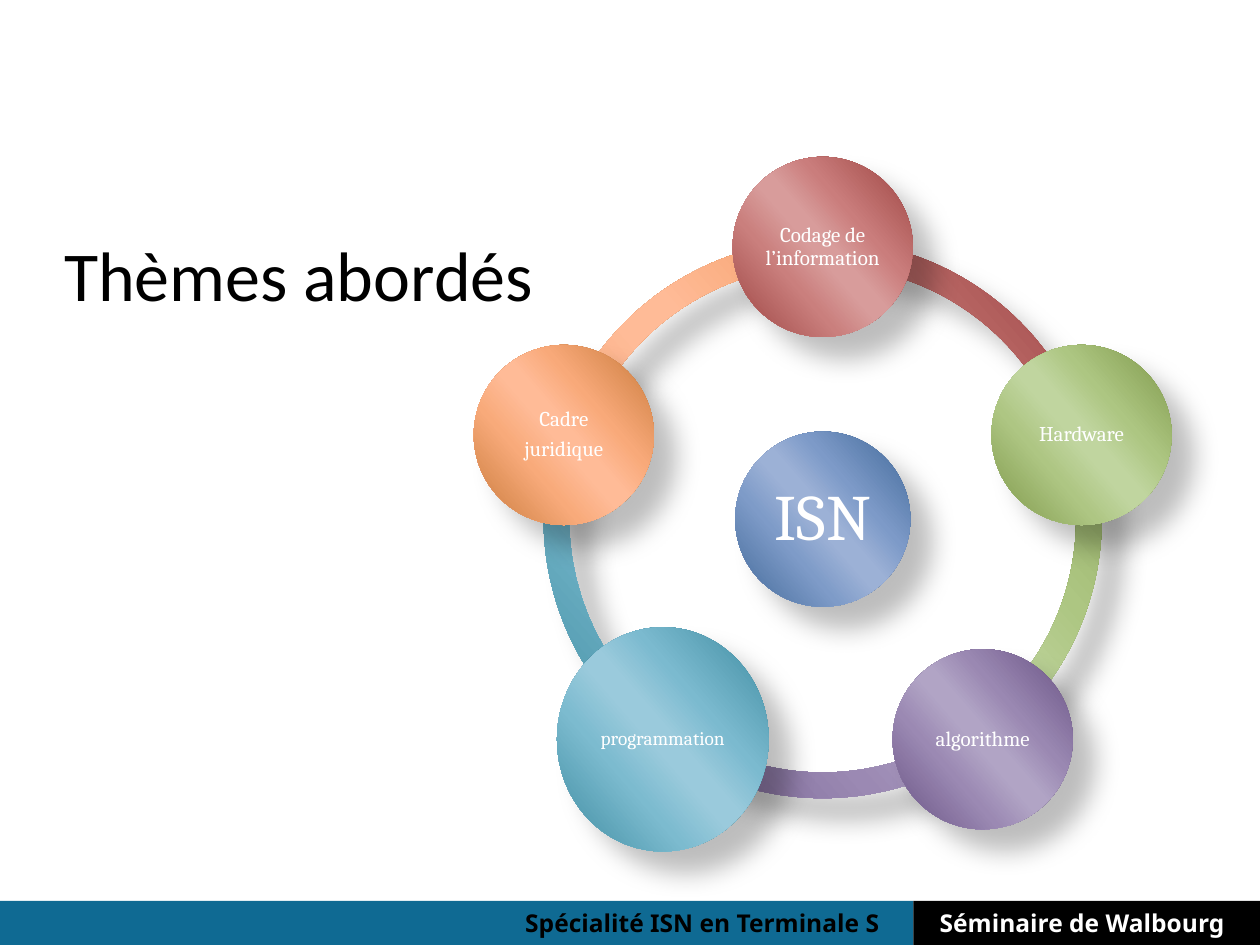
import copy
import math
from dataclasses import dataclass

import pptx
import pptx.dml.color
import pptx.enum.shapes
import pptx.enum.text
import pptx.oxml
import pptx.oxml.ns
import pptx.util

Inches = pptx.util.Inches
Pt = pptx.util.Pt
MSO_SHAPE = pptx.enum.shapes.MSO_SHAPE
PP_ALIGN = pptx.enum.text.PP_ALIGN
MSO_ANCHOR = pptx.enum.text.MSO_ANCHOR


@dataclass(frozen=True)
class Theme:
    white: str = "FFFFFF"
    black: str = "000000"
    footer_blue: str = "0F6A93"
    title_font: str = "Calibri"
    footer_font: str = "Noto Sans"
    ball_font: str = "Cambria"
    title_size: int = 40
    footer_size: int = 14
    hub_size: int = 37
    ball_size: int = 12
    small_ball_size: int = 11
    # Gradient colours at the positions in GLOSS_STOPS
    blue: tuple = ("3F6797", "7D9AC8", "9CB1D6", "9CB1D6", "7E9BC8", "3F6797")
    red: tuple = ("9A403E", "CA7D7C", "D89C9B", "D89C9B", "CA7F7D", "9A403E")
    green: tuple = ("7C9647", "ADC682", "C0D59F", "C0D59F", "AEC683", "7C9647")
    purple: tuple = ("675082", "9A88B2", "B1A4C5", "B1A4C5", "9B89B3", "675082")
    teal: tuple = ("3C8A9F", "7BBACF", "9ACADC", "9ACADC", "7CBBCF", "3C8A9F")
    orange: tuple = ("C67838", "F8A979", "FFBB97", "FFBB97", "F8AA7A", "C67838")


THEME = Theme()
GLOSS_STOPS = (0, 33, 47, 53, 68, 100)
GLOSS_ANGLE = 221

CENTER_X, CENTER_Y = 6.53, 4.12
ORBIT = 2.16
RING_SIZE = 4.43
RING_THICKNESS = 0.046
HUB_SIZE = 1.39
BALL_SIZE = (1.43, 1.43)

# Clockwise from the top: lines, colours, (width, height), type size
TOPICS = [
    (["Codage de l’information"], THEME.red, BALL_SIZE, THEME.ball_size),
    (["Hardware"], THEME.green, BALL_SIZE, THEME.ball_size),
    (["algorithme"], THEME.purple, BALL_SIZE, THEME.ball_size),
    (["programmation"], THEME.teal, (1.68, 1.78), THEME.small_ball_size),
    (["Cadre", "juridique"], THEME.orange, BALL_SIZE, THEME.ball_size),
]
STEP = 360 / len(TOPICS)

SHADOW_XML = (
    f'<a:outerShdw {pptx.oxml.ns.nsdecls("a")} blurRad="{Pt(15)}" dist="{Pt(18)}" '
    'dir="2700000" algn="tl" rotWithShape="0">'
    f'<a:srgbClr val="{THEME.black}"><a:alpha val="26000"/></a:srgbClr></a:outerShdw>'
)


def rgb(color):
    return pptx.dml.color.RGBColor.from_string(color)


def set_format(target, values):
    for name, value in values.items():
        setattr(target, name, value)


def write(frame, lines, font, paragraph_format, frame_format):
    set_format(frame, frame_format)
    for index, line in enumerate(lines):
        paragraph = frame.paragraphs[0] if index == 0 else frame.add_paragraph()
        set_format(paragraph, paragraph_format)
        run = paragraph.add_run()
        run.text = line
        name, size, color, bold = font
        set_format(run.font, {"name": name, "size": Pt(size), "bold": bold})
        run.font.color.rgb = rgb(color)


def add_label(slide, box, text, font, paragraph_format, frame_format):
    label = slide.shapes.add_textbox(*map(Inches, box))
    write(label.text_frame, [text], font, paragraph_format, frame_format)


def add_bar(slide, box, color):
    bar = slide.shapes.add_shape(MSO_SHAPE.RECTANGLE, *map(Inches, box))
    bar.shadow.inherit = False
    bar.fill.solid()
    bar.fill.fore_color.rgb = rgb(color)
    bar.line.fill.background()


def add_glossy(slide, kind, center, size, colors):
    """Add a shape around a centre, with a diagonal sheen and a soft shadow."""
    (x, y), (width, height) = center, size
    shape = slide.shapes.add_shape(
        kind, *map(Inches, (x - width / 2, y - height / 2, width, height)))
    shape.fill.gradient()
    shape.fill.gradient_angle = GLOSS_ANGLE
    properties = shape.element.spPr
    stops = properties.find(".//" + pptx.oxml.ns.qn("a:gsLst"))
    for _ in range(len(colors) - len(stops)):
        stops.append(copy.deepcopy(stops[0]))
    for stop, position, color in zip(shape.fill.gradient_stops, GLOSS_STOPS, colors):
        stop.position = position / 100
        stop.color.rgb = rgb(color)
    shape.line.fill.background()
    shape.shadow.inherit = False
    effects = properties.find(pptx.oxml.ns.qn("a:effectLst"))
    effects.append(pptx.oxml.parse_xml(SHADOW_XML))
    return shape


def add_ring_segment(slide, start, colors):
    segment = add_glossy(slide, MSO_SHAPE.BLOCK_ARC, (CENTER_X, CENTER_Y),
                         (RING_SIZE, RING_SIZE), colors)
    # Angles are stored in 1/60000 degree, adjustments in 1/100000
    angles = [angle % 360 * 0.6 for angle in (start, start + STEP)]
    for index, value in enumerate([*angles, RING_THICKNESS]):
        segment.adjustments[index] = value


def add_ball(slide, center, size, colors, lines, type_size, inset):
    ball = add_glossy(slide, MSO_SHAPE.OVAL, center, size, colors)
    margins = {f"margin_{side}": Inches(inset)
               for side in ("left", "top", "right", "bottom")}
    write(ball.text_frame, lines,
          (THEME.ball_font, type_size, THEME.white, False),
          {"alignment": PP_ALIGN.CENTER, "line_spacing": 0.9,
           "space_after": Pt(0.35 * type_size)},
          {"word_wrap": True, "vertical_anchor": MSO_ANCHOR.MIDDLE, **margins})


def add_footer(slide):
    add_bar(slide, (-0.01, 7.15, 7.26, 0.36), THEME.footer_blue)
    add_bar(slide, (7.25, 7.15, 2.77, 0.36), THEME.black)
    for left, width, text, color in (
        (4.07, 3.12, "Spécialité ISN en Terminale S", THEME.black),
        (7.36, 2.53, "Séminaire de Walbourg", THEME.white),
    ):
        add_label(slide, (left, 7.16, width, 0.34), text,
                  (THEME.footer_font, THEME.footer_size, color, True),
                  {}, {"word_wrap": False})


def add_title(slide):
    add_label(slide, (0.51, 1.86, 7.8, 0.67), "Thèmes abordés",
              (THEME.title_font, THEME.title_size, THEME.black, False),
              {"line_spacing": 0.93},
              {"word_wrap": True, "margin_left": 0, "margin_top": Inches(0.04),
               "margin_right": 0, "margin_bottom": 0})


def add_topic_cycle(slide):
    starts = [270 + index * STEP for index in range(len(TOPICS))]
    for start, (_, colors, _, _) in reversed(list(zip(starts, TOPICS))):
        add_ring_segment(slide, start, colors)
    add_ball(slide, (CENTER_X, CENTER_Y), (HUB_SIZE, HUB_SIZE), THEME.blue,
             ["ISN"], THEME.hub_size, 0.05)
    for start, (lines, colors, size, type_size) in zip(starts, TOPICS):
        angle = math.radians(start)
        center = (CENTER_X + ORBIT * math.cos(angle),
                  CENTER_Y + ORBIT * math.sin(angle))
        add_ball(slide, center, size, colors, lines, type_size, 0.02)


def main():
    deck = pptx.Presentation()
    set_format(deck, {"slide_width": Inches(10), "slide_height": Inches(7.5)})
    slide = deck.slides.add_slide(deck.slide_layouts[6])
    add_footer(slide)
    add_title(slide)
    add_topic_cycle(slide)
    deck.save("out.pptx")


if __name__ == "__main__":
    main()
